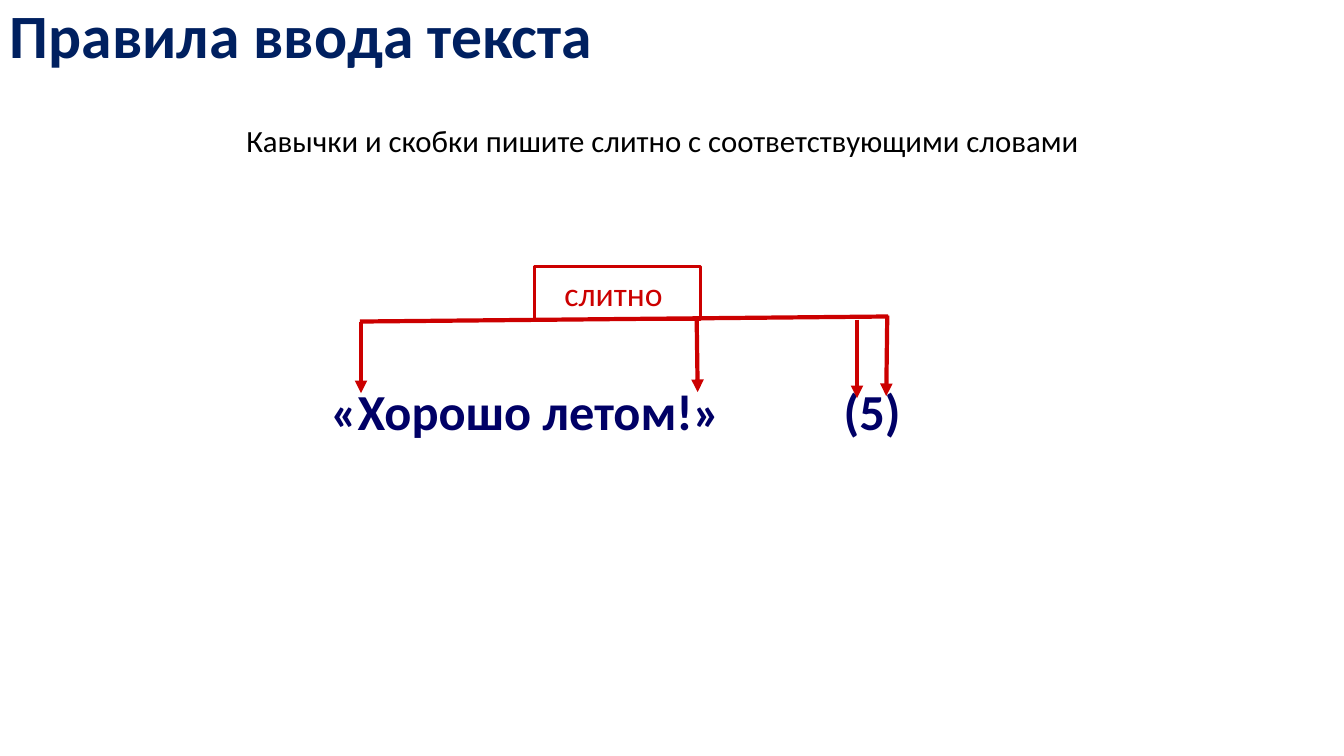
from lxml import etree
from pptx import Presentation
from pptx import util as u
from pptx.dml.color import RGBColor
from pptx.enum import shapes, text
from pptx.oxml.ns import qn

NAVY = RGBColor(0x00, 0x20, 0x60)
INDIGO = RGBColor(0x00, 0x00, 0x66)
RED = RGBColor(0xCC, 0x00, 0x00)
BLACK = RGBColor(0x00, 0x00, 0x00)


class RuleSlide:
    font = "Calibri"

    def __init__(self, deck):
        self.page = deck.slides.add_slide(deck.slide_layouts[6])

    def fill_text(self, box, words, size, color, bold=False, align=text.PP_ALIGN.LEFT,
                  spacing=None, tab=None):
        """Fill a shape with one paragraph, optionally with one tab stop."""
        frame = box.text_frame
        frame.word_wrap = True
        frame.vertical_anchor = text.MSO_ANCHOR.MIDDLE
        para = frame.paragraphs[0]
        para.alignment = align
        if spacing:
            para.line_spacing = spacing
        if tab:
            stops = etree.SubElement(para._p.get_or_add_pPr(), qn("a:tabLst"))
            etree.SubElement(stops, qn("a:tab"), pos=str(u.Inches(tab)), algn="l")
        span = para.add_run()
        span.text = words
        span.font.name = self.font
        span.font.size = u.Pt(size)
        span.font.bold = bold
        span.font.color.rgb = color

    def text(self, left, top, width, height, words, size, color, **style):
        box = self.page.shapes.add_textbox(*map(u.Inches, (left, top, width, height)))
        self.fill_text(box, words, size, color, **style)

    def label(self, left, top, width, height, words, size, color):
        box = self.page.shapes.add_shape(
            shapes.MSO_SHAPE.RECTANGLE, *map(u.Inches, (left, top, width, height)))
        box.shadow.inherit = False
        box.fill.background()
        box.line.color.rgb = color
        box.line.width = u.Pt(2.25)
        box.text_frame.margin_right = u.Inches(0.18)
        self.fill_text(box, words, size, color, align=text.PP_ALIGN.CENTER)

    def line(self, start, end, color, arrow=False):
        line = self.page.shapes.add_connector(
            shapes.MSO_CONNECTOR.STRAIGHT, *map(u.Inches, (*start, *end)))
        line.line.color.rgb = color
        line.line.width = u.Pt(3)
        if arrow:
            etree.SubElement(line.line._get_or_add_ln(), qn("a:tailEnd"), type="triangle")
        etree.SubElement(line._element.spPr, qn("a:effectLst"))


def main():
    deck = Presentation()
    deck.slide_width, deck.slide_height = u.Inches(13.33), u.Inches(7.5)
    slide = RuleSlide(deck)

    slide.text(0, 0, 11.5, 0.76, "Правила ввода текста", 44, NAVY, bold=True, spacing=0.9)
    slide.label(5.3, 2.64, 1.65, 0.53, "слитно", 24, RED)
    slide.line((3.57, 3.19), (8.81, 3.14), RED)
    slide.text(3.18, 3.72, 7.03, 0.7, "«Хорошо летом!»\t(5)", 36, INDIGO, bold=True, tab=5.09)

    arrows = [
        ((3.58, 3.19), (3.58, 3.9)),
        ((6.91, 3.18), (6.92, 3.89)),
        ((8.5, 3.17), (8.5, 3.95)),
        ((8.8, 3.13), (8.79, 3.93)),
    ]
    for start, end in arrows:
        slide.line(start, end, RED, arrow=True)

    slide.text(0.94, 1.16, 11.26, 0.47,
               "Кавычки и скобки пишите слитно с соответствующими словами",
               22, BLACK, align=text.PP_ALIGN.CENTER)
    deck.save("out.pptx")


if __name__ == "__main__":
    main()
